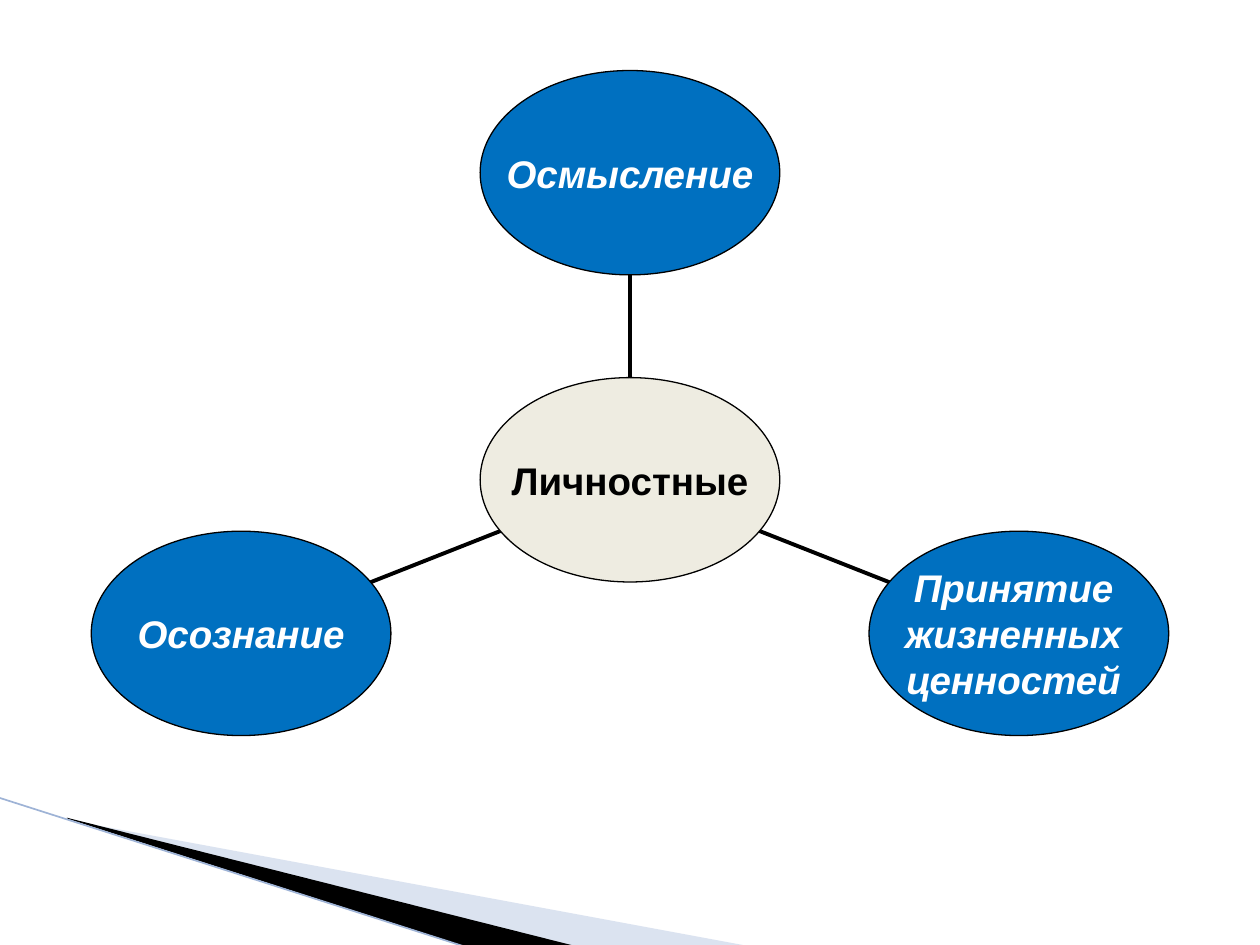
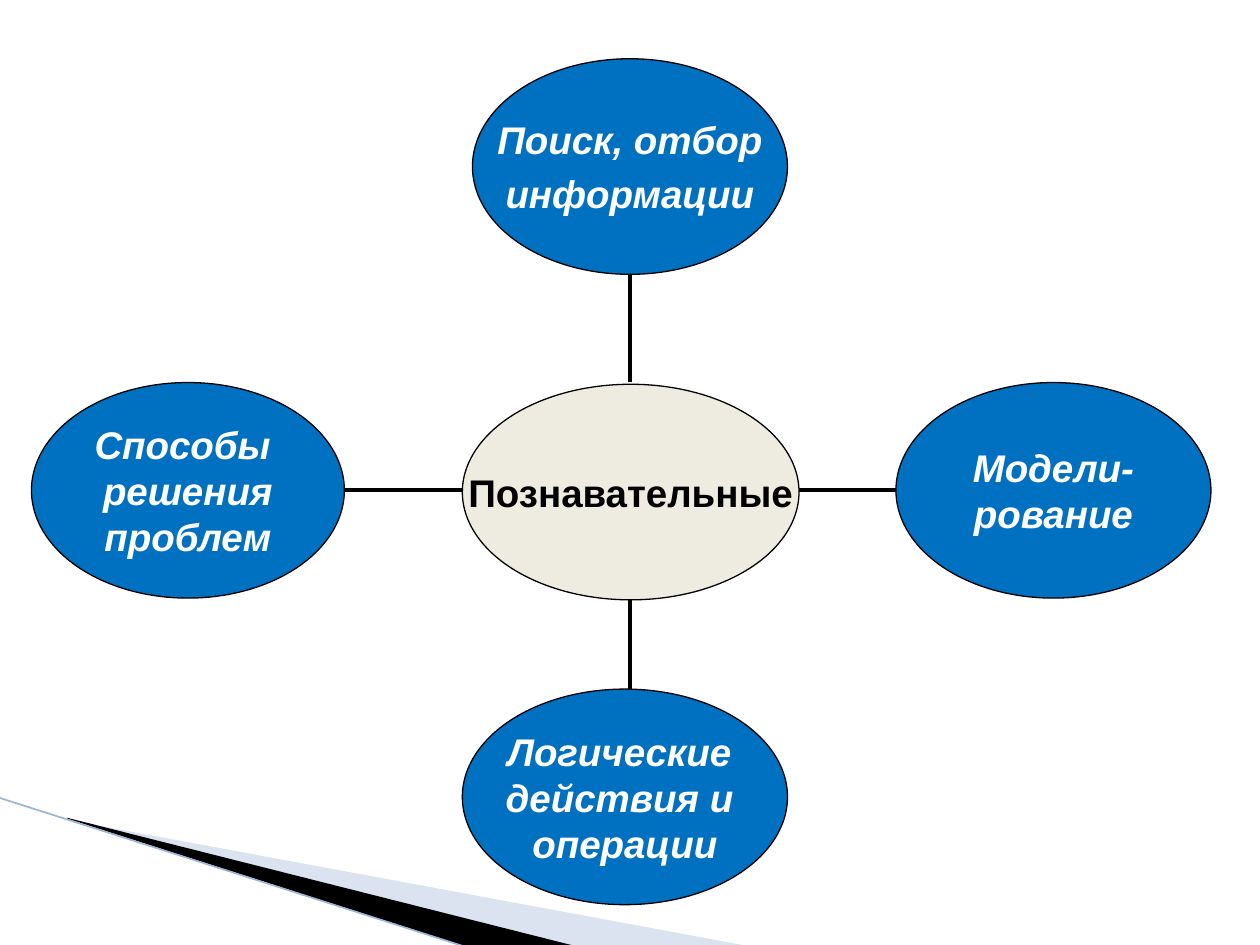
from dataclasses import dataclass
from math import cos, radians, sin

from pptx import Presentation
from pptx.dml.color import RGBColor
from pptx.enum.shapes import MSO_CONNECTOR, MSO_SHAPE
from pptx.enum.text import MSO_ANCHOR, PP_ALIGN
from pptx.oxml import parse_xml
from pptx.oxml.ns import nsdecls, qn
from pptx.util import Pt

COLORS = {
    "node": "0070C0",
    "hub": "EEECE1",
    "white": "FFFFFF",
    "black": "000000",
    "pale_wedge": "A7B9DB",
    "edge": "9EB3D6",
}
FONT = "Arial"
TEXT_SIZE = 22
PALE_WEDGE = [(39.6, 468.7), (428.4, 540.7), (328.3, 540.7), (39.6, 468)]
DARK_WEDGE = [(38.2, 467.3), (329, 540.7), (267.8, 541.4), (38.9, 468)]
EDGE = [(-0.7, 455.8), (267.1, 541.4)]


@dataclass
class Node:
    """An ellipse; shift moves it away from its place on the ring."""
    lines: list
    width: float
    angle: float = 0
    shift: tuple = (0, 0)
    space: float = 0


def rgb(name):
    return RGBColor.from_string(COLORS[name])


def add_line(slide, start, end, color, width):
    s = slide.shapes.add_connector(
        MSO_CONNECTOR.STRAIGHT, *(Pt(v) for v in (*start, *end)))
    s.line.color.rgb = rgb(color)
    s.line.width = Pt(width)
    s._element.spPr.append(parse_xml(f"<a:effectLst {nsdecls('a')}/>"))


def add_wedge(slide, points, color, opacity=100):
    start, *rest = [(Pt(x), Pt(y)) for x, y in points]
    builder = slide.shapes.build_freeform(*start)
    builder.add_line_segments(rest, close=True)
    s = builder.convert_to_shape()
    s.shadow.inherit = False
    s.fill.solid()
    s.fill.fore_color.rgb = rgb(color)
    s.line.fill.background()
    if opacity < 100:
        clr = s._element.spPr.find(qn("a:solidFill"))[0]
        clr.append(parse_xml(
            f'<a:alpha {nsdecls("a")} val="{opacity * 1000}"/>'))


def add_corner(slide):
    add_wedge(slide, PALE_WEDGE, "pale_wedge", 40)
    add_wedge(slide, DARK_WEDGE, "black")
    add_line(slide, *EDGE, "edge", 0.95)


def add_ellipse(slide, node, center, height, fill, color, italic):
    x = center[0] + node.shift[0] - node.width / 2
    y = center[1] + node.shift[1] - height / 2
    s = slide.shapes.add_shape(
        MSO_SHAPE.OVAL, Pt(x), Pt(y), Pt(node.width), Pt(height))
    s.shadow.inherit = False
    s.fill.solid()
    s.fill.fore_color.rgb = rgb(fill)
    s.line.color.rgb = rgb("black")
    s.line.width = Pt(0.75)

    tf = s.text_frame
    tf.margin_left = tf.margin_top = tf.margin_right = tf.margin_bottom = 0
    tf.word_wrap = False
    tf.vertical_anchor = MSO_ANCHOR.MIDDLE
    tf.text = "\n".join(node.lines)
    for i, p in enumerate(tf.paragraphs):
        p.alignment = PP_ALIGN.CENTER
        if i and node.space:
            p.space_before = Pt(node.space)
        for r in p.runs:
            r.font.name = FONT
            r.font.size = Pt(TEXT_SIZE)
            r.font.bold = True
            r.font.italic = italic
            r.font.color.rgb = rgb(color)


def add_radial_slide(prs, center, radii, height, hub, nodes):
    """Place nodes on a ring; each spoke spans the middle third of its radius."""
    slide = prs.slides.add_slide(prs.slide_layouts[6])
    add_corner(slide)

    for node in nodes:
        angle = radians(node.angle)

        def along(part):
            return (center[0] + part * radii[0] * cos(angle),
                    center[1] + part * radii[1] * sin(angle))

        add_line(slide, along(1 / 3), along(2 / 3), "black", 2.25)
        add_ellipse(slide, node, along(1), height, "node", "white", True)
    add_ellipse(slide, hub, center, height, "hub", "black", False)


def main():
    prs = Presentation()
    prs.slide_width, prs.slide_height = Pt(720), Pt(540)

    add_radial_slide(
        prs, (360, 274.2), (256.6, 175.5), 116.8,
        Node(["Личностные"], 171.2),
        [Node(["Осознание"], 171.2, 150),
         Node(["Принятие ", "жизненных ", "ценностей "], 171.2, 30),
         Node(["Осмысление"], 171.2, -90)])

    add_radial_slide(
        prs, (360, 280.2), (257, 185), 123.2,
        Node(["Познавательные"], 192.4, shift=(0.4, 1)),
        [Node(["Способы ", "решения", "проблем"], 178.8, 180, (4.4, 0)),
         Node(["Логические ", "действия и ", "операции"], 185.8, 90,
              (-2.9, -9.8)),
         Node(["Модели-", "рование"], 180, 0, (-15, 0)),
         Node(["Поиск, отбор", "информации"], 180, -90, space=4.4)])

    prs.save("out.pptx")


if __name__ == "__main__":
    main()
